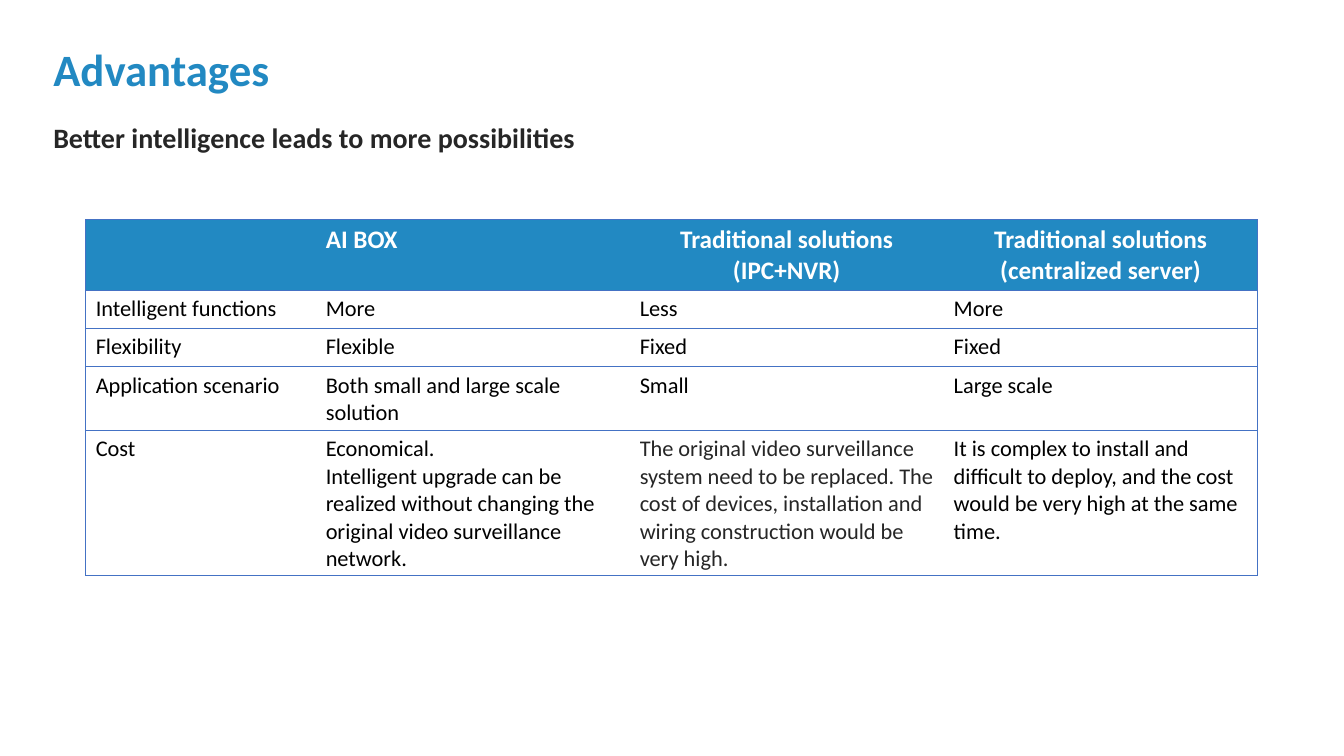
from lxml import etree
from pptx import Presentation
from pptx.dml.color import RGBColor
from pptx.enum.text import PP_ALIGN
from pptx.oxml.ns import qn
from pptx.util import Pt

LEFT, CENTER = PP_ALIGN.LEFT, PP_ALIGN.CENTER
FONT = "Calibri"
COLORS = {"blue": "2289C2", "dark": "262626", "white": "FFFFFF",
          "black": "000000", "border": "4472C4"}

COLUMN_WIDTHS = [164.3, 224.3, 224.3, 224.3]
ROW_HEIGHTS = [50.7, 27.2, 27.2, 45.7, 102.8]
# Each cell is a list of paragraphs.
ROWS = [
    [[], ["AI BOX"], ["Traditional solutions", "(IPC+NVR)"],
     ["Traditional solutions", "(centralized server)"]],
    [["Intelligent functions"], ["More"], ["Less"], ["More"]],
    [["Flexibility"], ["Flexible"], ["Fixed"], ["Fixed"]],
    [["Application scenario"], ["Both small and large scale solution"],
     ["Small"], ["Large scale"]],
    [["Cost"],
     ["Economical.",
      "Intelligent upgrade can be realized without changing the original "
      "video surveillance network."],
     ["The original video surveillance system need to be replaced. The cost "
      "of devices, installation and wiring construction would be very high."],
     ["It is complex to install and difficult to deploy, and the cost would "
      "be very high at the same time."]],
]


def rgb(name):
    return RGBColor.from_string(COLORS[name])


def write(tf, lines, size, color, bold=False, align=LEFT):
    for i, line in enumerate(lines):
        p = tf.paragraphs[0] if i == 0 else tf.add_paragraph()
        p.alignment = align
        r = p.add_run()
        r.text = line
        r.font.name = FONT
        r.font.size = Pt(size)
        r.font.bold = bold
        r.font.color.rgb = rgb(color)


def add_text(s, text, left, top, width, height, size, color):
    tf = s.shapes.add_textbox(Pt(left), Pt(top), Pt(width), Pt(height)).text_frame
    tf.word_wrap = True
    write(tf, [text], size, color, bold=True)


def set_borders(cell, visible):
    """Draw the sides named in visible (L, R, T, B) and clear the others."""
    tc_pr = cell._tc.get_or_add_tcPr()
    for i, side in enumerate("LRTB"):
        ln = etree.Element(qn(f"a:ln{side}"), w=str(Pt(0.5)))
        if side in visible:
            fill = etree.SubElement(ln, qn("a:solidFill"))
            etree.SubElement(fill, qn("a:srgbClr"), val=COLORS["border"])
        else:
            etree.SubElement(ln, qn("a:noFill"))
        tc_pr.insert(i, ln)


def add_comparison_table(s, left, top):
    table = s.shapes.add_table(
        len(ROWS), len(COLUMN_WIDTHS), Pt(left), Pt(top),
        Pt(sum(COLUMN_WIDTHS)), Pt(sum(ROW_HEIGHTS))).table
    table.first_row = False
    table.horz_banding = False
    for column, width in zip(table.columns, COLUMN_WIDTHS):
        column.width = Pt(width)
    last = len(COLUMN_WIDTHS) - 1
    for i, (row, height) in enumerate(zip(ROWS, ROW_HEIGHTS)):
        table.rows[i].height = Pt(height)
        for j, lines in enumerate(row):
            cell = table.cell(i, j)
            if i == 0:
                cell.fill.solid()
                cell.fill.fore_color.rgb = rgb("blue")
                write(cell.text_frame, lines, 18, "white", bold=True,
                      align=CENTER if j > 1 else LEFT)
            else:
                cell.fill.background()
                color = "dark" if (i, j) == (4, 2) else "black"
                write(cell.text_frame, lines, 16, color)
            set_borders(cell, "TB" + "L" * (j == 0) + "R" * (j == last))


def main():
    prs = Presentation()
    prs.slide_width, prs.slide_height = Pt(960), Pt(540)
    s = prs.slides.add_slide(prs.slide_layouts[6])
    add_text(s, "Advantages", 31, 26.6, 474.5, 46, 32, "blue")
    add_text(s, "Better intelligence leads to more possibilities",
             31, 82.8, 432, 31.5, 20, "dark")
    add_comparison_table(s, 61.2, 156.8)
    prs.save("out.pptx")


if __name__ == "__main__":
    main()
